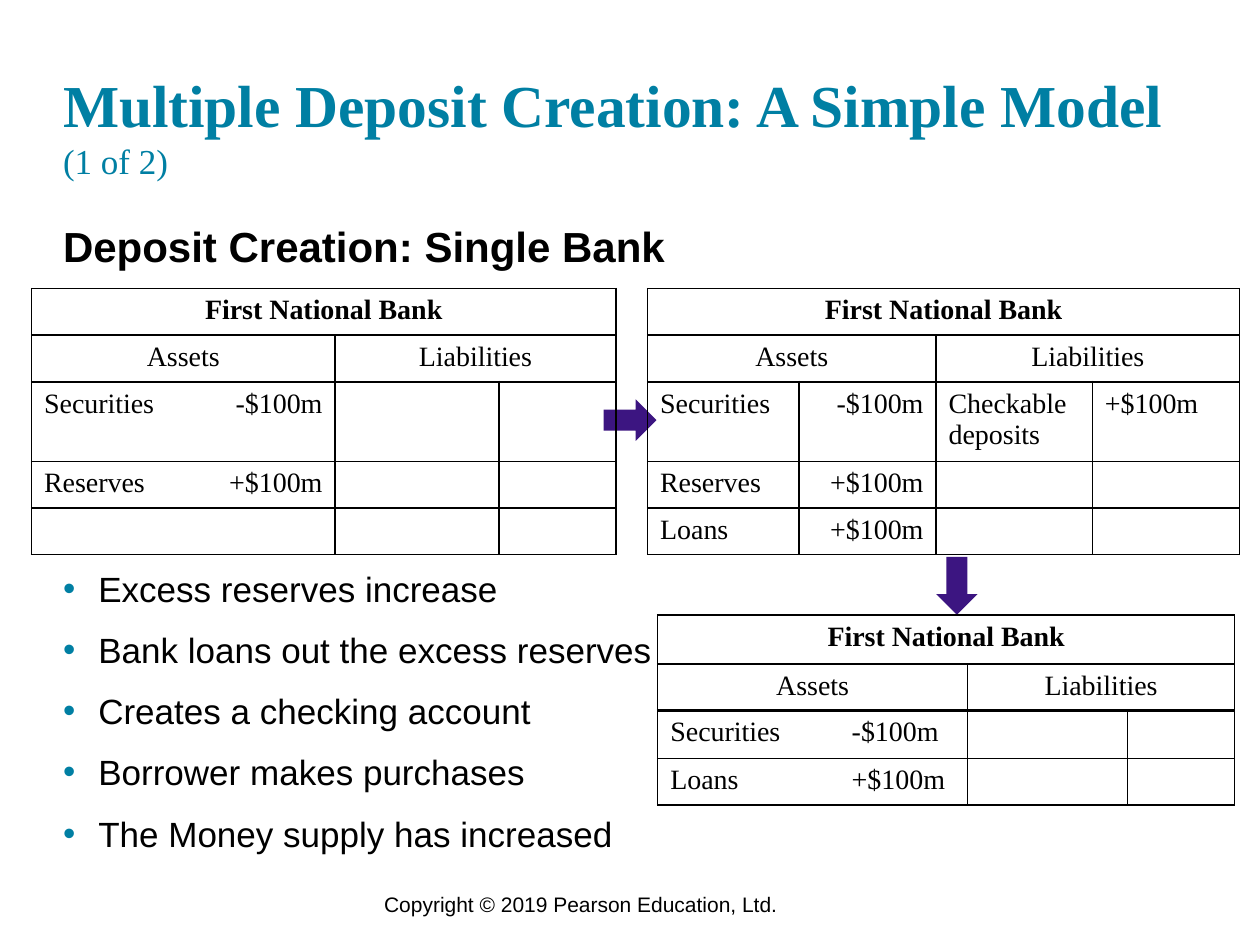
"""Build a slide on multiple deposit creation with bank T-accounts."""
import pptx
import pptx.util
from lxml import etree
from pptx.dml.color import RGBColor
from pptx.enum.shapes import MSO_SHAPE
from pptx.enum.text import MSO_ANCHOR, MSO_AUTO_SIZE, PP_ALIGN
from pptx.oxml.ns import qn
from pptx.util import Inches

COLORS = {"black": "000000", "teal": "007FA3", "purple": "3C1581"}
NO_GRID_STYLE = "{2D5ABB26-0587-4C30-8999-92F81FD0307C}"
SERIF = "Times New Roman"
POINTS = [
    "Excess reserves increase",
    "Bank loans out the excess reserves",
    "Creates a checking account",
    "Borrower makes purchases",
    "The Money supply has increased",
]
BEFORE_LOAN = [
    ["Securities", "-$100m", "", ""],
    ["Reserves", "+$100m", "", ""],
    ["", "", "", ""],
]
AFTER_LOAN = [
    ["Securities", "-$100m", "Checkable deposits", "+$100m"],
    ["Reserves", "+$100m", "", ""],
    ["Loans", "+$100m", "", ""],
]
AFTER_PURCHASE = [
    ["Securities", "-$100m", "", ""],
    ["Loans", "+$100m", "", ""],
]


def write(paragraph, text, font="Arial", size=20, color="black", bold=False, align=PP_ALIGN.LEFT):
    """Add one formatted run to a paragraph."""
    paragraph.alignment = align
    run = paragraph.add_run()
    run.text = text
    run.font.name = font
    run.font.size = pptx.util.Pt(size)
    run.font.bold = bold
    run.font.color.rgb = RGBColor.from_string(COLORS[color])


def place(placeholder, left, top, width, height, anchor=MSO_ANCHOR.TOP):
    """Move a placeholder, clear its margins and return its text frame."""
    placeholder.left, placeholder.top = Inches(left), Inches(top)
    placeholder.width, placeholder.height = Inches(width), Inches(height)
    frame = placeholder.text_frame
    frame.margin_left = frame.margin_right = frame.margin_top = frame.margin_bottom = 0
    frame.auto_size = MSO_AUTO_SIZE.NONE
    frame.vertical_anchor = anchor
    frame.word_wrap = True
    return frame


def set_bullet(paragraph, character=None, indent=0.0):
    """Give a paragraph a teal bullet, or remove its bullet."""
    properties = paragraph._p.get_or_add_pPr()
    properties.set("marL", str(Inches(indent)))
    properties.set("indent", str(-Inches(indent)))
    if character is None:
        etree.SubElement(properties, qn("a:buNone"))
        return
    bullet_color = etree.SubElement(properties, qn("a:buClr"))
    etree.SubElement(bullet_color, qn("a:srgbClr"), val=COLORS["teal"])
    etree.SubElement(properties, qn("a:buFont"), typeface="Arial")
    etree.SubElement(properties, qn("a:buChar"), char=character)


def add_bullets(frame, texts):
    """Fill a text frame with a bulleted list."""
    for index, text in enumerate(texts):
        paragraph = frame.add_paragraph() if index else frame.paragraphs[0]
        set_bullet(paragraph, "•", 0.28)
        paragraph.space_before = pptx.util.Pt(11 if index else 0)
        write(paragraph, text)


def add_arrow(slide, preset, left, top, width, height):
    """Add a purple block arrow."""
    shape = slide.shapes.add_shape(preset, Inches(left), Inches(top), Inches(width), Inches(height))
    shape.shadow.inherit = False
    shape.fill.solid()
    shape.fill.fore_color.rgb = RGBColor.from_string(COLORS["purple"])
    shape.line.fill.background()


def add_table(slide, left, top, widths, heights):
    """Add a table without style whose empty cells have no margins."""
    frame = slide.shapes.add_table(
        len(heights), len(widths), Inches(left), Inches(top), Inches(sum(widths)), Inches(sum(heights))
    )
    table = frame.table
    table.first_row = table.horz_banding = False
    table._tbl.tblPr.find(qn("a:tableStyleId")).text = NO_GRID_STYLE
    for column, width in zip(table.columns, widths):
        column.width = Inches(width)
    for row, height in zip(table.rows, heights):
        row.height = Inches(height)
    for cell in table.iter_cells():
        cell.margin_top = cell.margin_bottom = 0
    return table


def set_borders(cell, borders):
    """Draw the given sides of a cell, each with its width in points."""
    properties = cell._tc.get_or_add_tcPr()
    for side in "LRTB":
        if side in borders:
            width = str(pptx.util.Pt(borders[side]))
            line = etree.SubElement(properties, qn("a:ln" + side), w=width)
            fill = etree.SubElement(line, qn("a:solidFill"))
            etree.SubElement(fill, qn("a:srgbClr"), val=COLORS["black"])
    cell.fill.background()


def fill_account(table, first, entries, amount_align=PP_ALIGN.RIGHT):
    """Write one T-account into four columns, starting at the first."""
    rows = [["First National Bank", "", "", ""], ["Assets", "", "Liabilities", ""]] + entries
    for row, texts in enumerate(rows):
        span = 2 if row else 4
        for offset, text in enumerate(texts):
            cell = table.cell(row, first + offset)
            borders = {"T": 1.5 if row == 2 else 1, "B": 1.5 if row == 1 else 1}
            starts = offset % span == 0
            if starts:
                borders["L"] = 1
            if (offset + 1) % span == 0 or (starts and row < 2):
                borders["R"] = 1
            set_borders(cell, borders)
            if row < 2 and starts:
                cell.merge(table.cell(row, first + offset + span - 1))
            if text:
                cell.margin_top = cell.margin_bottom = Inches(0.05)
                align = PP_ALIGN.CENTER if row < 2 else amount_align if offset == 1 else PP_ALIGN.LEFT
                write(cell.text_frame.paragraphs[0], text, font=SERIF, size=16, bold=row == 0, align=align)


def main():
    """Build and save the slide."""
    presentation = pptx.Presentation()
    presentation.slide_width, presentation.slide_height = Inches(10), Inches(7.5)
    slide = presentation.slides.add_slide(presentation.slide_layouts[3])
    title, heading, points = slide.placeholders

    copyright_box = slide.shapes.add_textbox(Inches(2.95), Inches(7.03), Inches(6.75), Inches(0.3))
    copyright_box.text_frame.word_wrap = True
    write(copyright_box.text_frame.paragraphs[0], "Copyright © 2019 Pearson Education, Ltd.", size=12)

    paragraph = place(title, 0.5, 0.24, 9, 1.2, MSO_ANCHOR.BOTTOM).paragraphs[0]
    write(paragraph, "Multiple Deposit Creation: A Simple Model ", font=SERIF, size=34, color="teal", bold=True)
    write(paragraph, "(1 of 2)", font=SERIF, color="teal")

    paragraph = place(heading, 0.5, 1.75, 9, 0.46).paragraphs[0]
    set_bullet(paragraph)
    paragraph.space_before = 0
    write(paragraph, "Deposit Creation: Single Bank", size=24, bold=True)
    add_bullets(place(points, 0.5, 4.5, 4.85, 2.39), POINTS)

    add_arrow(slide, MSO_SHAPE.RIGHT_ARROW, 4.79, 3.17, 0.42, 0.33)
    add_arrow(slide, MSO_SHAPE.DOWN_ARROW, 7.43, 4.42, 0.33, 0.46)

    widths = [1.39, 1.02, 1.3, 0.93, 0.25, 1.2, 1.09, 1.24, 1.17]
    pair = add_table(slide, 0.25, 2.29, widths, [0.37, 0.37, 0.63, 0.37, 0.37])
    fill_account(pair, 0, BEFORE_LOAN)
    pair.cell(0, 4).merge(pair.cell(2, 4))
    fill_account(pair, 5, AFTER_LOAN)

    final = add_table(slide, 5.22, 4.88, [1.44, 1.02, 1.27, 0.85], [0.39, 0.37, 0.38, 0.37])
    fill_account(final, 0, AFTER_PURCHASE, amount_align=PP_ALIGN.LEFT)

    presentation.save("out.pptx")


if __name__ == "__main__":
    main()
